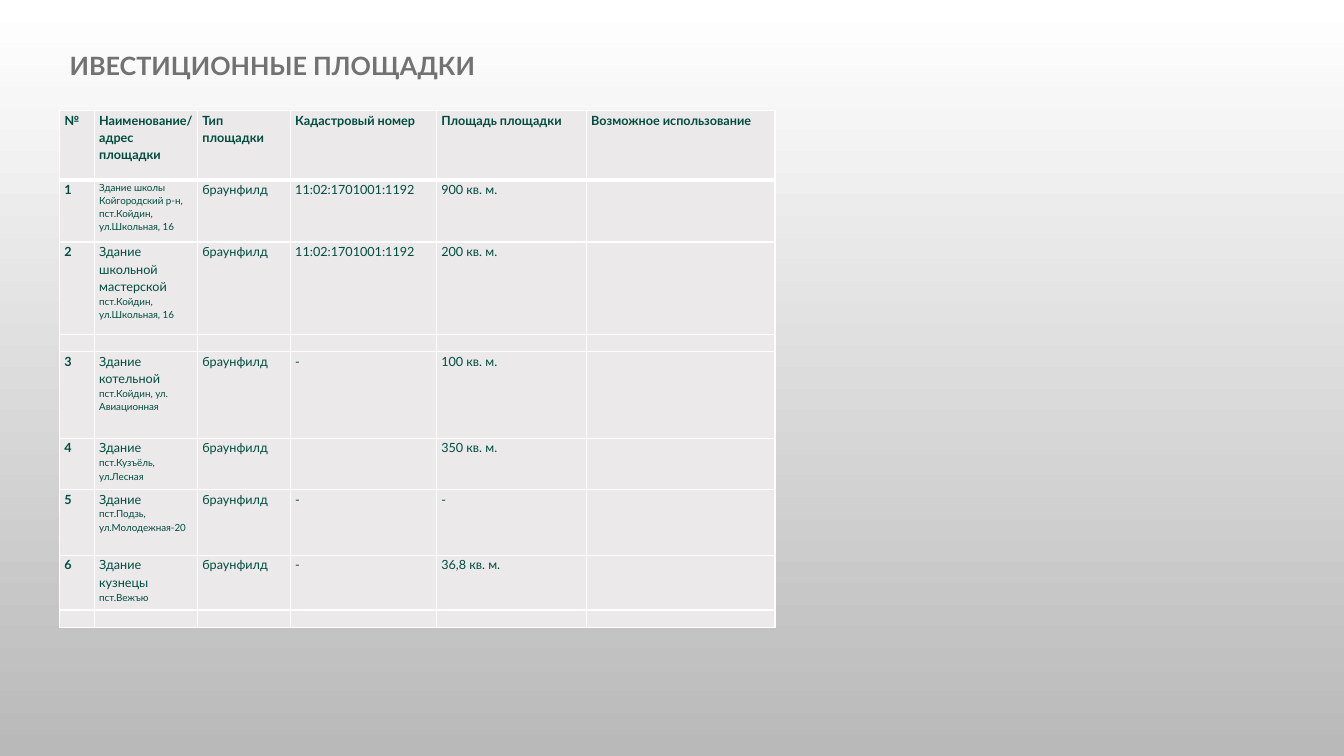
from dataclasses import dataclass

from lxml.etree import SubElement
from pptx import Presentation
from pptx.dml.color import RGBColor
from pptx.enum.text import MSO_ANCHOR, MSO_AUTO_SIZE, PP_ALIGN
from pptx.oxml.ns import qn
from pptx.util import Cm, Pt

TITLE = "ИВЕСТИЦИОННЫЕ ПЛОЩАДКИ"
HEADER = ("№", "Наименование/ адрес площадки", "Тип площадки",
          "Кадастровый номер", "Площадь площадки", "Возможное использование")
SITE_TYPE = "браунфилд"
CADASTRE = "11:02:1701001:1192"

# number, building, address, cadastral number, area; None is an empty row
SITES = [
    ("1", "Здание школы", "Койгородский р-н, пст.Койдин, ул.Школьная, 16", CADASTRE, "900 кв. м."),
    ("2", "Здание школьной мастерской", "пст.Койдин, ул.Школьная, 16", CADASTRE, "200 кв. м."),
    None,
    ("3", "Здание котельной", "пст.Койдин, ул. Авиационная", "-", "100 кв. м."),
    ("4", "Здание", "пст.Кузъёль, ул.Лесная", "", "350 кв. м."),
    ("5", "Здание", "пст.Подзь, ул.Молодежная-20", "-", "-"),
    ("6", "Здание кузнецы", "пст.Вежъю", "-", "36,8 кв. м."),
    None,
]
SMALL_NAMES = {"Здание школы"}

COL_WIDTHS = [0.88, 2.6, 2.34, 3.68, 3.78, 4.75]
ROW_HEIGHTS = [1.75, 1.57, 2.33, 0.43, 2.18, 1.29, 1.66, 1.38, 0.45]
LEFT, TABLE_TOP = 1.5, 2.78


@dataclass(frozen=True)
class Theme:
    font: str = "Lato"
    title: str = "727271"
    text: str = "004D40"
    cell: str = "EBE9E9"
    border: str = "FFFFFF"
    bg_top: str = "FFFFFF"
    bg_bottom: str = "B9B9B9"
    title_size: float = 18
    text_size: float = 9
    small_size: float = 7
    line_spacing: float = 1.15
    thin: float = 1
    thick: float = 3


THEME = Theme()


def style_run(r, size, color, bold):
    r.font.name = THEME.font
    r.font.size = Pt(size)
    r.font.bold = bold
    r.font.color.rgb = RGBColor.from_string(color)


def set_borders(cell, top, bottom):
    """Draw all four cell sides; must run before the fill is set."""
    tc_pr = cell._tc.get_or_add_tcPr()
    widths = {"lnL": THEME.thin, "lnR": THEME.thin, "lnT": top, "lnB": bottom}
    for side, width in widths.items():
        ln = SubElement(tc_pr, qn(f"a:{side}"), w=str(Pt(width)))
        fill = SubElement(ln, qn("a:solidFill"))
        SubElement(fill, qn("a:srgbClr"), val=THEME.border)


def fill_cell(cell, lines, bold):
    """Write (text, size) lines, one paragraph each."""
    cell.margin_left = cell.margin_right = Cm(0.12)
    cell.margin_top = cell.margin_bottom = 0
    cell.fill.solid()
    cell.fill.fore_color.rgb = RGBColor.from_string(THEME.cell)
    tf = cell.text_frame
    tf.text = "\n".join(text for text, _ in lines)
    for p, (_, size) in zip(tf.paragraphs, lines):
        p.line_spacing = THEME.line_spacing
        for r in p.runs:
            style_run(r, size, THEME.text, bold)
        if not p.runs:
            SubElement(p._p, qn("a:endParaRPr"), sz=str(int(THEME.small_size * 100)))


def site_cells(site):
    """Return the lines of each cell in a site row."""
    if site is None:
        return [[("", THEME.small_size)]] * len(HEADER)
    number, name, address, cadastre, area = site
    name_size = THEME.small_size if name in SMALL_NAMES else THEME.text_size
    building = [(name, name_size), (address, THEME.small_size)]
    number, kind, cadastre, area, use = (
        [(text, THEME.text_size)] for text in (number, SITE_TYPE, cadastre, area, ""))
    return [number, building, kind, cadastre, area, use]


def add_title(slide):
    sp = slide.shapes.title
    sp.left, sp.top, sp.width, sp.height = Cm(LEFT), Cm(1.14), Cm(15.19), Cm(1.02)
    tf = sp.text_frame
    tf.text = TITLE
    tf.word_wrap = True
    tf.auto_size = MSO_AUTO_SIZE.NONE
    tf.vertical_anchor = MSO_ANCHOR.TOP
    p = tf.paragraphs[0]
    p.alignment = PP_ALIGN.LEFT
    style_run(p.runs[0], THEME.title_size, THEME.title, True)


def add_sites_table(slide):
    rows = [[[(text, THEME.text_size)] for text in HEADER]] + [site_cells(s) for s in SITES]
    table = slide.shapes.add_table(
        len(rows), len(HEADER), Cm(LEFT), Cm(TABLE_TOP),
        Cm(sum(COL_WIDTHS)), Cm(sum(ROW_HEIGHTS))).table
    table.first_row = table.horz_banding = False
    for column, width in zip(table.columns, COL_WIDTHS):
        column.width = Cm(width)
    for i, (row, height) in enumerate(zip(rows, ROW_HEIGHTS)):
        table.rows[i].height = Cm(height)
        top = THEME.thick if i == 1 else THEME.thin
        bottom = THEME.thick if i == 0 else THEME.thin
        for j, lines in enumerate(row):
            cell = table.cell(i, j)
            set_borders(cell, top, bottom)
            fill_cell(cell, lines, bold=i == 0 or j == 0)


def main():
    prs = Presentation()
    prs.slide_width, prs.slide_height = Cm(33.87), Cm(19.05)
    slide = prs.slides.add_slide(prs.slide_layouts[5])
    fill = slide.background.fill
    fill.gradient()
    fill.gradient_angle = 270
    for stop, color in zip(fill.gradient_stops, (THEME.bg_top, THEME.bg_bottom)):
        stop.color.rgb = RGBColor.from_string(color)
    add_title(slide)
    add_sites_table(slide)
    prs.save("out.pptx")


if __name__ == "__main__":
    main()
